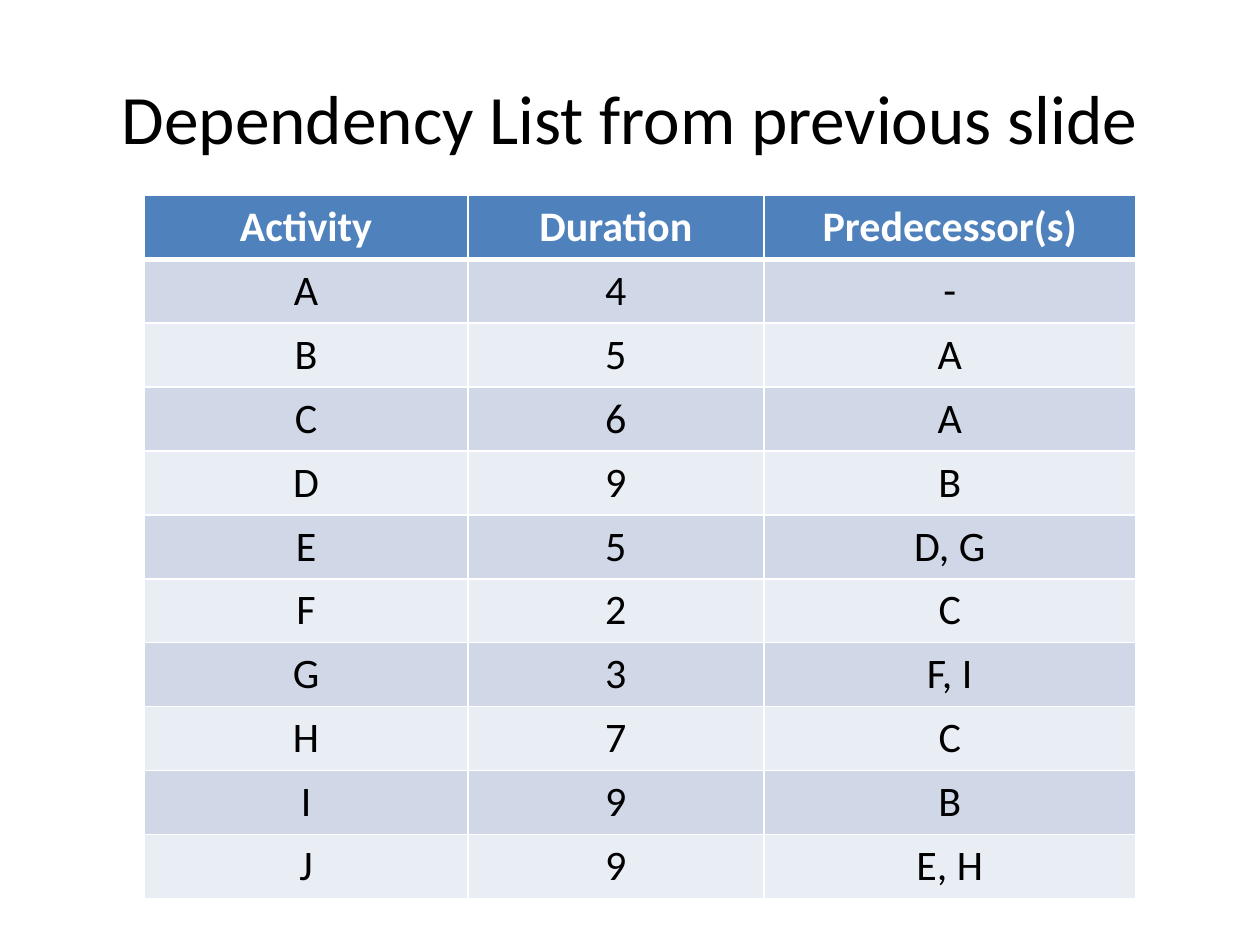
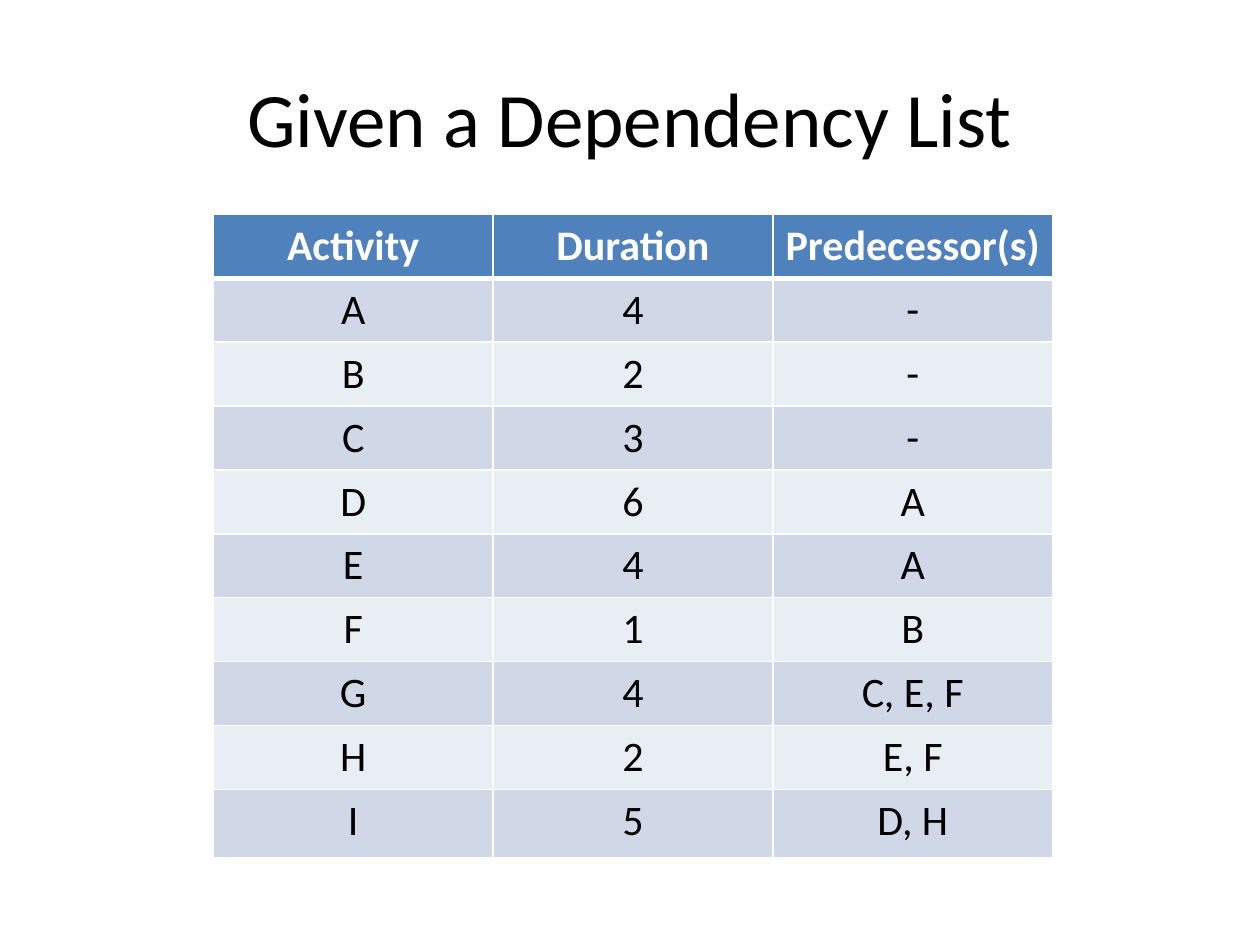
import dataclasses

import lxml.etree
import pptx
import pptx.dml.color
import pptx.enum.text
import pptx.oxml.ns
import pptx.util

Cm = pptx.util.Cm
Pt = pptx.util.Pt


@dataclasses.dataclass(frozen=True)
class Theme:
    font: str = "Calibri"
    text: str = "000000"
    header_text: str = "FFFFFF"
    header_fill: str = "4F81BD"
    band_fills: tuple = ("D0D8E8", "E9EDF4")
    border: str = "FFFFFF"
    thin_border: float = 1
    header_border: float = 3
    cell_size: float = 24
    long_title_size: float = 39.6
    title_size: float = 44


THEME = Theme()
TITLE_LAYOUT = 5
ROW_HEIGHT = 1.28
HEADINGS = ("Activity", "Duration", "Predecessor(s)")

# Activity, duration and predecessors
PREVIOUS_ACTIVITIES = (
    ("A", 4, "-"),
    ("B", 5, "A"),
    ("C", 6, "A"),
    ("D", 9, "B"),
    ("E", 5, "D, G"),
    ("F", 2, "C"),
    ("G", 3, "F, I"),
    ("H", 7, "C"),
    ("I", 9, "B"),
    ("J", 9, "E, H"),
)
GIVEN_ACTIVITIES = (
    ("A", 4, "-"),
    ("B", 2, "-"),
    ("C", 3, "-"),
    ("D", 6, "A"),
    ("E", 4, "A"),
    ("F", 1, "B"),
    ("G", 4, "C, E, F"),
    ("H", 2, "E, F"),
    ("I", 5, "D, H"),
)


def color(value):
    return pptx.dml.color.RGBColor.from_string(value)


def format_paragraph(para, size, text_color, bold=False):
    para.alignment = pptx.enum.text.PP_ALIGN.CENTER
    para.font.name = THEME.font
    para.font.size = Pt(size)
    para.font.bold = bold
    para.font.color.rgb = color(text_color)


def add_titled_page(deck, title, size):
    page = deck.slides.add_slide(deck.slide_layouts[TITLE_LAYOUT])
    box = page.shapes.title
    box.left, box.top, box.width, box.height = Cm(1.27), Cm(0.76), Cm(22.86), Cm(3.18)
    frame = box.text_frame
    frame.text = title
    frame.word_wrap = True
    frame.auto_size = pptx.enum.text.MSO_AUTO_SIZE.NONE
    frame.vertical_anchor = pptx.enum.text.MSO_ANCHOR.MIDDLE
    format_paragraph(frame.paragraphs[0], size, THEME.text)
    return page


def set_borders(cell, top, bottom):
    """Draw the four cell borders; widths are in points."""
    properties = cell._tc.get_or_add_tcPr()
    widths = {"L": THEME.thin_border, "R": THEME.thin_border, "T": top, "B": bottom}
    for side, width in widths.items():
        line = lxml.etree.SubElement(
            properties, pptx.oxml.ns.qn(f"a:ln{side}"), w=str(Pt(width)))
        fill = lxml.etree.SubElement(line, pptx.oxml.ns.qn("a:solidFill"))
        lxml.etree.SubElement(fill, pptx.oxml.ns.qn("a:srgbClr"), val=THEME.border)


def format_cell(cell, value, row_index):
    is_header = row_index == 0
    cell.text = str(value)
    format_paragraph(cell.text_frame.paragraphs[0], THEME.cell_size,
                     THEME.header_text if is_header else THEME.text, is_header)
    # The heavy rule lies between the header and the first activity
    set_borders(cell,
                top=THEME.header_border if row_index == 1 else THEME.thin_border,
                bottom=THEME.header_border if is_header else THEME.thin_border)
    cell.fill.solid()
    cell.fill.fore_color.rgb = color(
        THEME.header_fill if is_header else THEME.band_fills[(row_index - 1) % 2])


def add_dependency_table(page, activities, left, top, column_widths):
    rows = (HEADINGS, *activities)
    frame = page.shapes.add_table(
        len(rows), len(HEADINGS), Cm(left), Cm(top),
        Cm(sum(column_widths)), Cm(ROW_HEIGHT * len(rows)))
    table = frame.table
    table.horz_banding = False
    for column, width in zip(table.columns, column_widths):
        column.width = Cm(width)
    for row_index, values in enumerate(rows):
        table.rows[row_index].height = Cm(ROW_HEIGHT)
        for column_index, value in enumerate(values):
            format_cell(table.cell(row_index, column_index), value, row_index)
    return table


def main():
    deck = pptx.Presentation()
    deck.slide_width, deck.slide_height = Cm(25.4), Cm(19.05)

    # Dependencies read from the earlier network
    page = add_titled_page(deck, "Dependency List from previous slide",
                           THEME.long_title_size)
    add_dependency_table(page, PREVIOUS_ACTIVITIES, 2.91, 3.94, (6.52, 5.97, 7.49))

    # Dependencies for the next network, with a taller last row
    page = add_titled_page(deck, "Given a Dependency List", THEME.title_size)
    table = add_dependency_table(page, GIVEN_ACTIVITIES, 4.3, 4.32, (5.64,) * 3)
    table.rows[len(GIVEN_ACTIVITIES)].height = Cm(1.37)

    deck.save("out.pptx")


if __name__ == "__main__":
    main()
